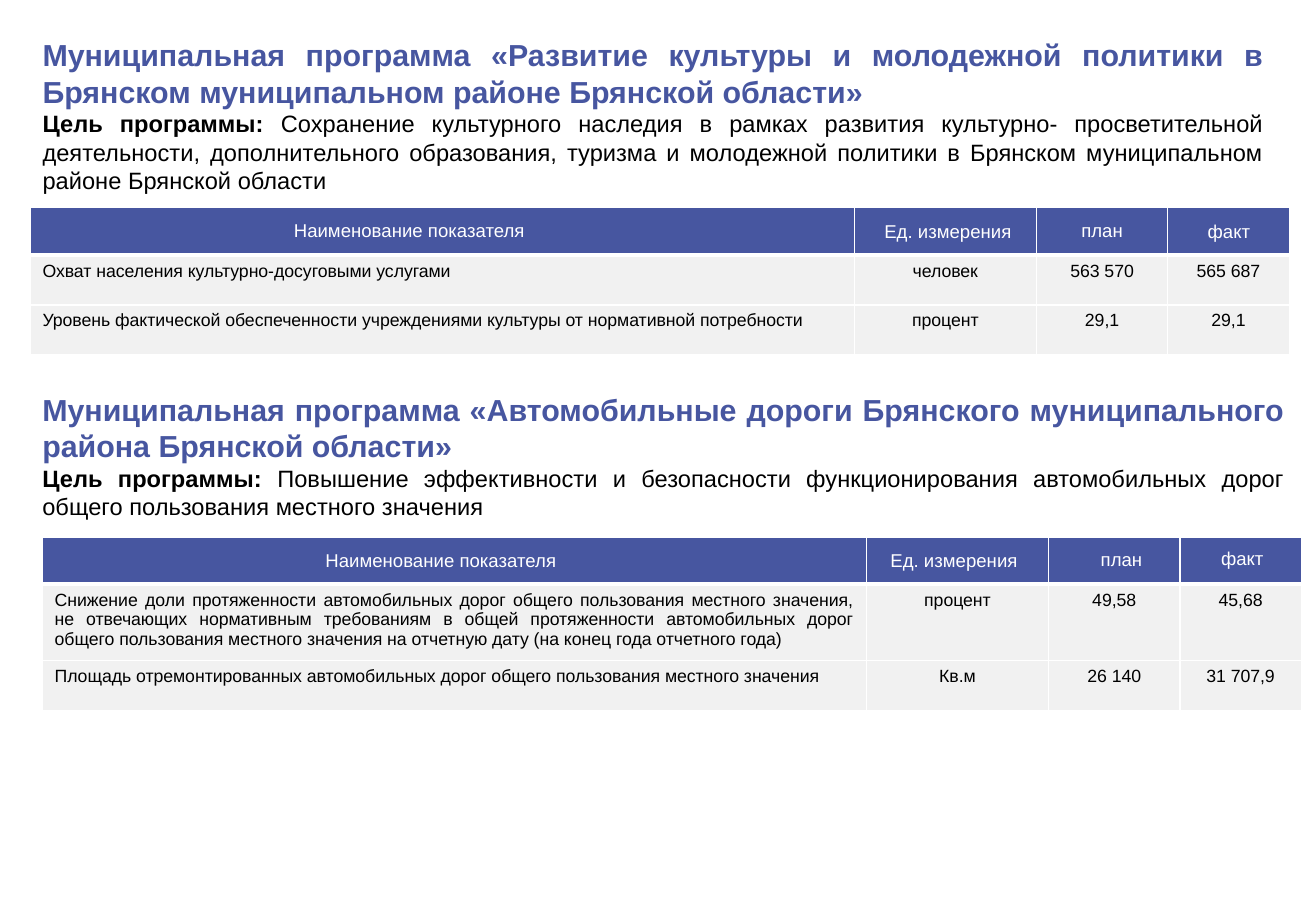
from pptx import Presentation
from pptx.dml.color import RGBColor
from pptx.enum.text import MSO_ANCHOR, MSO_AUTO_SIZE, PP_ALIGN
from pptx.oxml import parse_xml
from pptx.oxml.ns import nsdecls
from pptx.util import Inches, Pt

TOP = MSO_ANCHOR.TOP
NO_FIT = MSO_AUTO_SIZE.NONE
LEFT, CENTER, JUSTIFY = PP_ALIGN.LEFT, PP_ALIGN.CENTER, PP_ALIGN.JUSTIFY

FONT = "Arial"
BLUE, GREY, WHITE, BLACK = "4756A0", "F1F1F1", "FFFFFF", "000000"
COLUMNS = [6.78, 1.5, 1.08, 1.0]
HEADERS = ["Наименование показателя", "Ед. измерения", "план", "факт"]
HEADER_WIDTHS = [2.13, 1.26, 0.55, 0.55]

CULTURE = {
    "name": "Муниципальная программа «Развитие культуры и молодежной политики "
            "в Брянском муниципальном районе Брянской области»",
    "goal": "Сохранение культурного наследия в рамках развития культурно- "
            "просветительной деятельности, дополнительного образования, туризма "
            "и молодежной политики в Брянском муниципальном районе Брянской области",
    "heading_box": (0.25, 0.25, 10.25, 1.41),
    "table_at": (0.25, 1.71),
    "row_heights": [0.39, 0.41, 0.41],
    "header_at": [(2.32, 1.75), (7.18, 1.76), (8.8, 1.75), (9.84, 1.76)],
    "rows": [
        ["Охват населения культурно-досуговыми услугами",
         "человек", "563 570", "565 687"],
        ["Уровень фактической обеспеченности учреждениями культуры "
         "от нормативной потребности", "процент", "29,1", "29,1"],
    ],
}
ROADS = {
    "name": "Муниципальная программа «Автомобильные дороги Брянского "
            "муниципального района Брянской области»",
    "goal": "Повышение эффективности и безопасности функционирования "
            "автомобильных дорог общего пользования местного значения",
    "heading_box": (0.25, 3.17, 10.42, 1.18),
    "table_at": (0.35, 4.42),
    "row_heights": [0.39, 0.63, 0.41],
    "header_at": [(2.58, 4.47), (7.23, 4.47), (8.96, 4.46), (9.95, 4.45)],
    "rows": [
        ["Снижение доли протяженности автомобильных дорог общего пользования "
         "местного значения, не отвечающих нормативным требованиям в общей "
         "протяженности автомобильных дорог общего пользования местного значения "
         "на отчетную дату (на конец года отчетного года)",
         "процент", "49,58", "45,68"],
        ["Площадь отремонтированных автомобильных дорог общего пользования "
         "местного значения", "Кв.м", "26 140", "31 707,9"],
    ],
}


def color(value):
    return RGBColor.from_string(value)


def add_run(p, text, size, fill, bold=False):
    r = p.add_run()
    r.text = text
    r.font.name = FONT
    r.font.size = Pt(size)
    r.font.bold = bold
    r.font.color.rgb = color(fill)


def set_borders(cell, bottom):
    tc_pr = cell._tc.get_or_add_tcPr()
    widths = {"lnL": 1, "lnR": 1, "lnT": 1, "lnB": bottom}
    for i, (side, width) in enumerate(widths.items()):
        tc_pr.insert(i, parse_xml(
            f'<a:{side} {nsdecls("a")} w="{Pt(width)}"><a:solidFill>'
            f'<a:srgbClr val="{WHITE}"/></a:solidFill></a:{side}>'))


def fill_heading(sp, box, name, goal):
    """Program name and its goal, in one text block."""
    sp.left, sp.top, sp.width, sp.height = (Inches(v) for v in box)
    tf = sp.text_frame
    tf.word_wrap = True
    tf.auto_size = NO_FIT
    tf.vertical_anchor = TOP
    p = tf.paragraphs[0]
    p.alignment = JUSTIFY
    add_run(p, name, 18, BLUE, bold=True)
    p = tf.add_paragraph()
    p.alignment = JUSTIFY
    add_run(p, "Цель программы: ", 14, BLACK, bold=True)
    add_run(p, goal, 14, BLACK)


def add_indicators(s, at, row_heights, rows):
    """Indicator table; its header row is a blue band under the labels."""
    sizes = (*at, sum(COLUMNS), sum(row_heights))
    table = s.shapes.add_table(len(rows) + 1, len(COLUMNS),
                               *(Inches(v) for v in sizes)).table
    table.horz_banding = False
    for column, width in zip(table.columns, COLUMNS):
        column.width = Inches(width)
    for row, height in zip(table.rows, row_heights):
        row.height = Inches(height)
    for cell in table.rows[0].cells:
        cell.margin_top = cell.margin_bottom = 0
        cell.fill.solid()
        cell.fill.fore_color.rgb = color(BLUE)
        set_borders(cell, bottom=3)
    for i, values in enumerate(rows, 1):
        for j, value in enumerate(values):
            cell = table.cell(i, j)
            cell.fill.solid()
            cell.fill.fore_color.rgb = color(GREY)
            set_borders(cell, bottom=1)
            p = cell.text_frame.paragraphs[0]
            p.alignment = CENTER if j else JUSTIFY
            add_run(p, value, 10.5, BLACK)


def add_header_labels(s, positions):
    """Column labels over the header band."""
    for text, width, (left, top) in zip(HEADERS, HEADER_WIDTHS, positions):
        sp = s.shapes.add_textbox(Inches(left), Inches(top),
                                  Inches(width), Inches(0.29))
        p = sp.text_frame.paragraphs[0]
        p.alignment = LEFT
        add_run(p, text, 11, WHITE)


def add_program(s, sp, program):
    fill_heading(sp, program["heading_box"], program["name"], program["goal"])
    add_indicators(s, program["table_at"], program["row_heights"], program["rows"])
    add_header_labels(s, program["header_at"])


def main():
    prs = Presentation()
    prs.slide_width, prs.slide_height = Inches(10.83), Inches(7.5)
    s = prs.slides.add_slide(prs.slide_layouts[5])
    # Culture program takes the slide title
    add_program(s, s.shapes.title, CULTURE)
    # Roads program
    add_program(s, s.shapes.add_textbox(0, 0, 0, 0), ROADS)
    prs.save("out.pptx")


if __name__ == "__main__":
    main()
